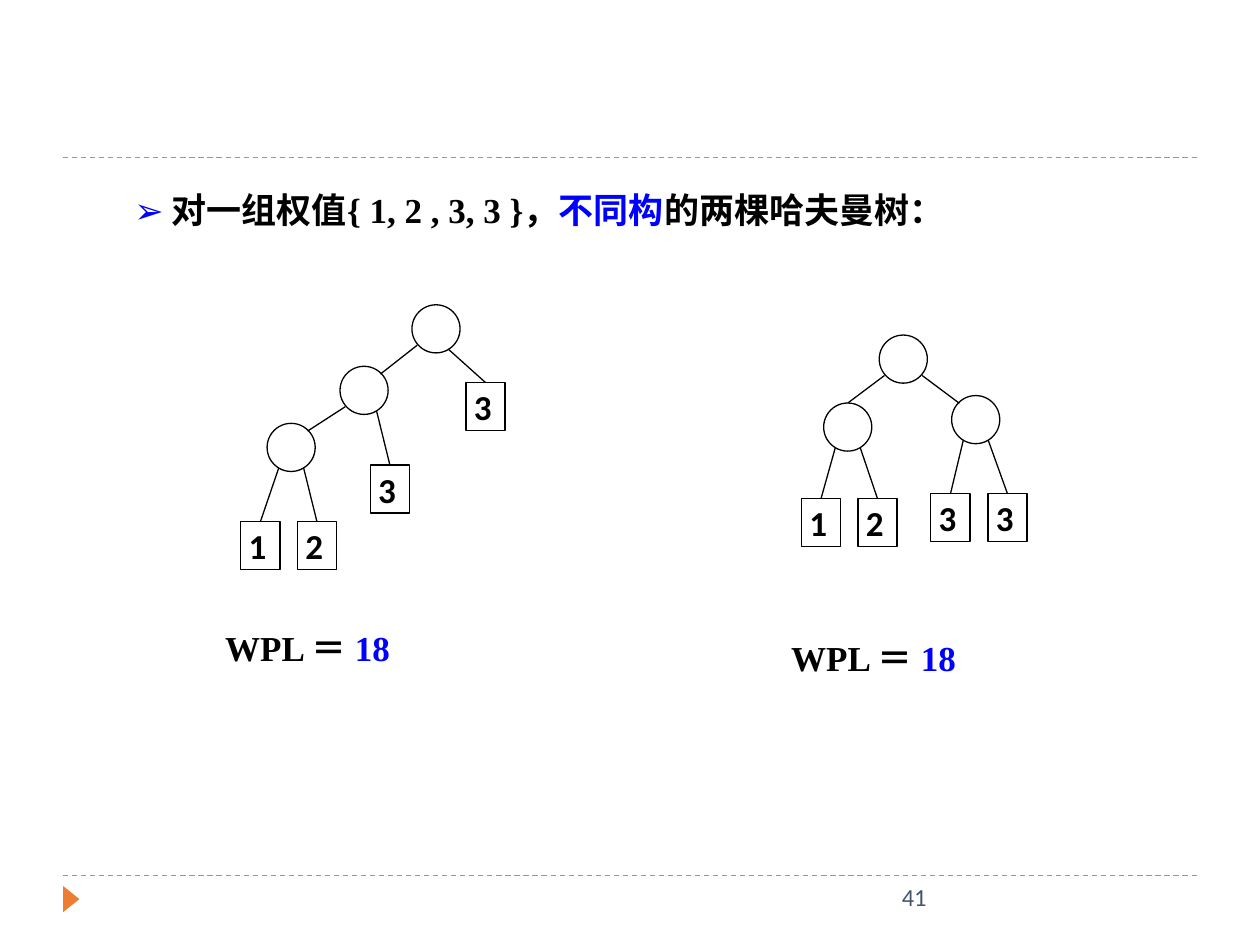
from dataclasses import dataclass

from lxml.etree import SubElement
from pptx import Presentation
from pptx.dml.color import RGBColor
from pptx.enum.dml import MSO_LINE
from pptx.enum.shapes import MSO_CONNECTOR, MSO_SHAPE
from pptx.enum.text import MSO_ANCHOR, MSO_AUTO_SIZE, PP_ALIGN
from pptx.oxml.ns import qn
from pptx.util import Cm, Pt


@dataclass(frozen=True)
class Theme:
    black: RGBColor = RGBColor(0, 0, 0)
    white: RGBColor = RGBColor(255, 255, 255)
    blue: RGBColor = RGBColor(0, 0, 255)
    orange: RGBColor = RGBColor(0xED, 0x7D, 0x31)
    slate: RGBColor = RGBColor(0x44, 0x54, 0x6A)
    serif: str = "Times New Roman"
    sans: str = "Calibri"
    body: Pt = Pt(20)
    small: Pt = Pt(14)
    hairline: Pt = Pt(0.75)


THEME = Theme()
NODE_HEIGHT, LEAF_WIDTH = 0.97, 0.79


@dataclass
class Node:
    """Tree node by its centre in cm; a node with a weight is a leaf."""
    x: float
    y: float
    weight: str = ""
    children: tuple = ()
    top_entry: bool = False  # the edge from the parent meets the top point


def add_line(shapes, start, end, color, dashed=False):
    line = shapes.add_connector(MSO_CONNECTOR.STRAIGHT,
                                *(Cm(v) for v in (*start, *end)))
    line.line.color.rgb = color
    line.line.width = THEME.hairline
    if dashed:
        line.line.dash_style = MSO_LINE.DASH
    SubElement(line._element.spPr, qn("a:effectLst"))
    return line


def add_text(shapes, box, runs, font=THEME.serif, size=THEME.body, bold=True,
             indent=0.25, grow=True):
    text_box = shapes.add_textbox(*(Cm(v) for v in box))
    frame = text_box.text_frame
    frame.word_wrap = True
    frame.margin_left = Cm(indent)
    if grow:
        frame.auto_size = MSO_AUTO_SIZE.SHAPE_TO_FIT_TEXT
    paragraph = frame.paragraphs[0]
    paragraph.font.name, paragraph.font.size = font, size
    paragraph.font.bold = bold
    for text, color in runs:
        run = paragraph.add_run()
        run.text = text
        run.font.color.rgb = color
    return text_box


def add_node(shapes, node):
    kind, width = ((MSO_SHAPE.RECTANGLE, LEAF_WIDTH) if node.weight
                   else (MSO_SHAPE.OVAL, NODE_HEIGHT))
    shape = shapes.add_shape(kind, Cm(node.x - width / 2), Cm(node.y - NODE_HEIGHT / 2),
                             Cm(width), Cm(NODE_HEIGHT))
    shape.shadow.inherit = False
    shape.fill.solid()
    shape.fill.fore_color.rgb = THEME.white
    shape.line.color.rgb = THEME.black
    shape.line.width = THEME.hairline
    if node.weight:
        frame = shape.text_frame
        frame.margin_left = Cm(0.16)
        frame.margin_top = frame.margin_right = frame.margin_bottom = 0
        frame.vertical_anchor = MSO_ANCHOR.MIDDLE
        paragraph = frame.paragraphs[0]
        paragraph.text = node.weight
        paragraph.alignment = PP_ALIGN.LEFT
        paragraph.font.name, paragraph.font.size = THEME.sans, THEME.body
        paragraph.font.bold = True
        paragraph.font.color.rgb = THEME.black
    return shape


def add_edge(shapes, parent, child, child_shape):
    side = 1 if child.x > parent.x else -1
    if child.weight:
        start = parent.x + side * 0.25, parent.y + 0.41
        end = child.x, child.y - NODE_HEIGHT / 2
    else:
        start = parent.x + side * 0.38, parent.y + 0.33
        end = ((child.x, child.y - NODE_HEIGHT / 2) if child.top_entry
               else (child.x - side * 0.33, child.y - 0.33))
    edge = add_line(shapes, start, end, THEME.black)
    if child.weight:
        edge.end_connect(child_shape, 0)


def add_tree(shapes, node):
    shape = add_node(shapes, node)
    for child in node.children:
        add_edge(shapes, node, child, add_tree(shapes, child))
    return shape


def add_frame(shapes):
    for y in (3.18, 17.65):
        add_line(shapes, (1.27, y), (24.13, y), THEME.orange, dashed=True)
    marker = shapes.add_shape(MSO_SHAPE.ISOSCELES_TRIANGLE,
                              Cm(1.17), Cm(17.96), Cm(0.53), Cm(0.33))
    marker.rotation = 90
    marker.shadow.inherit = False
    marker.fill.solid()
    marker.fill.fore_color.rgb = THEME.orange
    marker.line.fill.background()


def main():
    prs = Presentation()
    prs.slide_width, prs.slide_height = Cm(25.4), Cm(19.05)
    shapes = prs.slides.add_slide(prs.slide_layouts[6]).shapes

    # Rules, corner marker and page number
    add_frame(shapes)
    add_text(shapes, (17.93, 17.65, 5.72, 1.02), [("41", THEME.slate)],
             THEME.sans, THEME.small, bold=False, grow=False)

    # Statement
    add_text(shapes, (2.46, 3.68, 17.65, 1.12), [
        ("➢ ", THEME.blue), ("对一组权值{ 1, 2 , 3, 3 }，", THEME.black),
        ("不同构", THEME.blue), ("的两棵哈夫曼树：", THEME.black)])

    # Two Huffman trees for the same weights
    skewed = Node(8.79, 6.63, children=(
        Node(7.34, 7.87, children=(
            Node(5.87, 9.02, children=(Node(5.25, 11, "1"), Node(6.39, 11, "2"))),
            Node(7.86, 9.86, "3"))),
        Node(9.79, 8.2, "3")))
    balanced = Node(18.21, 7.24, children=(
        Node(17.09, 8.61, top_entry=True,
             children=(Node(16.55, 10.54, "1"), Node(17.69, 10.54, "2"))),
        Node(19.67, 8.46,
             children=(Node(19.16, 10.44, "3"), Node(20.31, 10.44, "3")))))
    for root in (skewed, balanced):
        add_tree(shapes.add_group_shape().shapes, root)

    # Weighted path lengths
    for left, top in ((3.58, 12.5), (14.99, 12.7)):
        label = add_text(shapes, (left, top, 5.6, 1.12),
                         [("WPL ＝ ", THEME.black), ("18", THEME.blue)], indent=0.96)
        label.text_frame.vertical_anchor = MSO_ANCHOR.MIDDLE

    prs.save("out.pptx")


if __name__ == "__main__":
    main()
